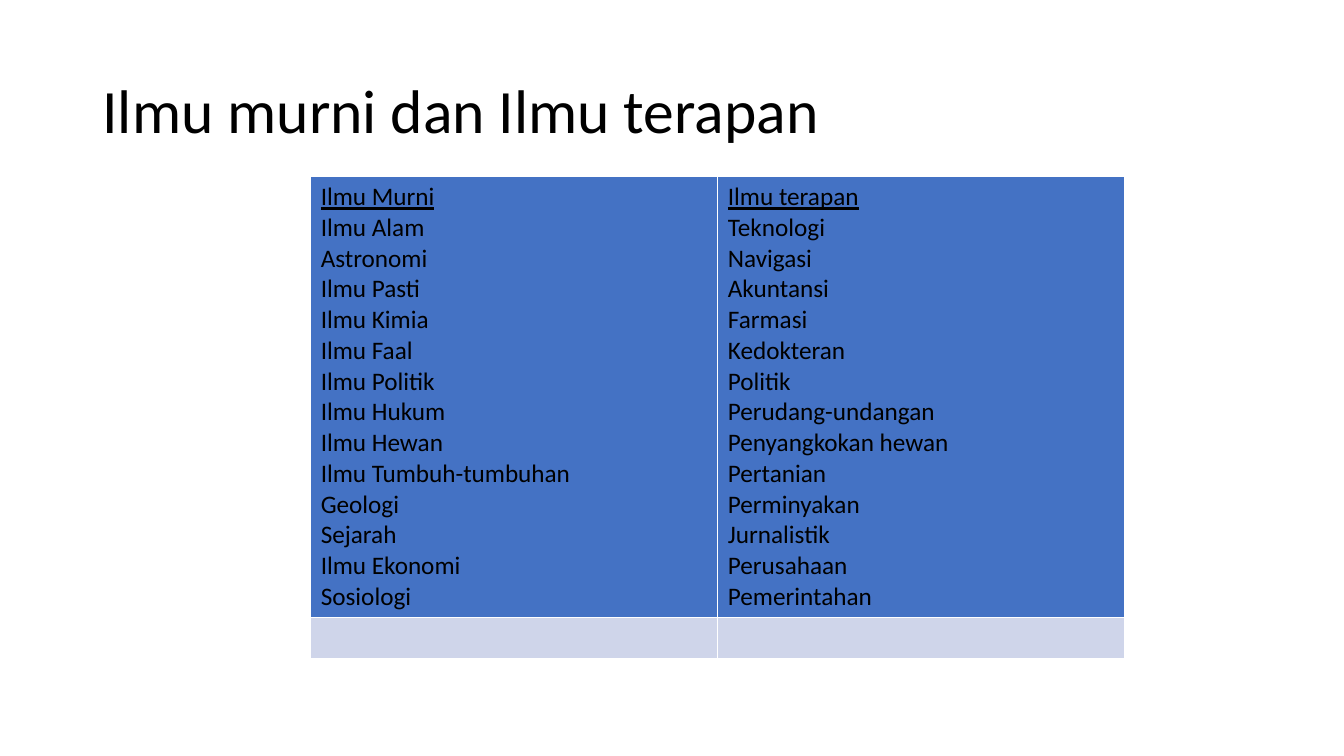
from dataclasses import dataclass

from pptx import Presentation
from pptx.dml.color import RGBColor
from pptx.enum.text import MSO_ANCHOR, PP_ALIGN
from pptx.util import Cm, Pt

LEFT = PP_ALIGN.LEFT
MIDDLE = MSO_ANCHOR.MIDDLE
TITLE_ONLY = 5


@dataclass(frozen=True)
class Theme:
    font: str = "Calibri"
    title_size: Pt = Pt(44)
    body_size: Pt = Pt(18)
    ink: RGBColor = RGBColor(0x00, 0x00, 0x00)
    list_fill: RGBColor = RGBColor(0x44, 0x72, 0xC4)
    empty_fill: RGBColor = RGBColor(0xCF, 0xD5, 0xEA)


THEME = Theme()

SCIENCES = {
    "Ilmu Murni": [
        "Ilmu Alam", "Astronomi", "Ilmu Pasti", "Ilmu Kimia", "Ilmu Faal",
        "Ilmu Politik", "Ilmu Hukum", "Ilmu Hewan", "Ilmu Tumbuh-tumbuhan",
        "Geologi", "Sejarah", "Ilmu Ekonomi", "Sosiologi",
    ],
    "Ilmu terapan": [
        "Teknologi", "Navigasi", "Akuntansi", "Farmasi", "Kedokteran",
        "Politik", "Perudang-undangan", "Penyangkokan hewan", "Pertanian",
        "Perminyakan", "Jurnalistik", "Perusahaan", "Pemerintahan",
    ],
}


def style_font(font, size):
    font.name = THEME.font
    font.size = size
    font.color.rgb = THEME.ink
    font.bold = False


prs = Presentation()
prs.slide_width, prs.slide_height = Cm(33.87), Cm(19.05)
slide = prs.slides.add_slide(prs.slide_layouts[TITLE_ONLY])

# Title
title = slide.shapes.title
title.left, title.top = Cm(2.33), Cm(1.02)
title.width, title.height = Cm(29.21), Cm(3.68)
title.text_frame.text = "Ilmu murni dan Ilmu terapan"
title.text_frame.vertical_anchor = MIDDLE
heading = title.text_frame.paragraphs[0]
heading.alignment = LEFT
heading.line_spacing = 0.9
style_font(heading.font, THEME.title_size)

# Table: one column per kind of science, its list in the first row
column_width = Cm(10.26)
row_heights = [Cm(10.92), Cm(1.03)]
sciences = slide.shapes.add_table(
    len(row_heights), len(SCIENCES), Cm(7.83), Cm(4.45),
    column_width * len(SCIENCES), sum(row_heights),
).table
for row, height in zip(sciences.rows, row_heights):
    row.height = height

for column, (kind, fields) in enumerate(SCIENCES.items()):
    sciences.columns[column].width = column_width
    for row, fill in enumerate([THEME.list_fill, THEME.empty_fill]):
        cell = sciences.cell(row, column)
        cell.fill.solid()
        cell.fill.fore_color.rgb = fill

    listing = sciences.cell(0, column).text_frame
    listing.text = "\n".join([kind, *fields])
    for paragraph in listing.paragraphs:
        style_font(paragraph.font, THEME.body_size)
    listing.paragraphs[0].font.underline = True

prs.save("out.pptx")
